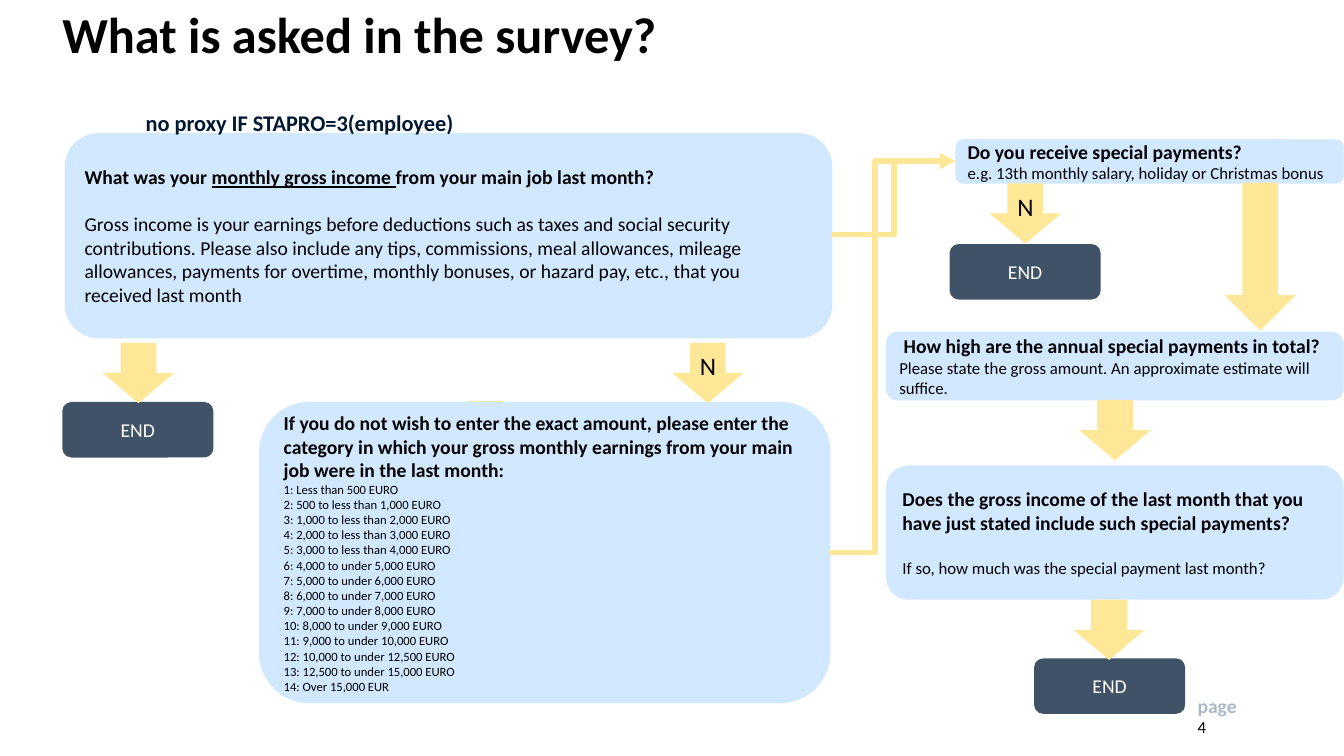
"""Build the survey question flow slide."""
from lxml import etree
from pptx import Presentation
from pptx import util as u
from pptx.dml import color
from pptx.enum import shapes, text
from pptx.oxml import ns

BOX, END, ARROW = "D1E8FF", "405265", "FFE798"
BLACK, WHITE, NAVY, GREY = "000000", "FFFFFF", "001932", "ABBAC9"
ROUND, DOWN = shapes.MSO_SHAPE.ROUNDED_RECTANGLE, shapes.MSO_SHAPE.DOWN_ARROW
LEFT, CENTER = text.PP_ALIGN.LEFT, text.PP_ALIGN.CENTER
TOP, MIDDLE = text.MSO_ANCHOR.TOP, text.MSO_ANCHOR.MIDDLE
NO_MARGINS = {f"margin_{side}": 0 for side in ("left", "top", "right", "bottom")}


def paint(fill, hex_color):
    fill.solid()
    fill.fore_color.rgb = color.RGBColor.from_string(hex_color)


def write(shape, paragraphs, hex_color, frame_format, paragraph_format):
    frame = shape.text_frame
    for name, value in frame_format.items():
        setattr(frame, name, value)
    for index, (space_before, runs) in enumerate(paragraphs):
        paragraph = frame.add_paragraph() if index else frame.paragraphs[0]
        for name, value in {"space_before": u.Pt(space_before), **paragraph_format}.items():
            setattr(paragraph, name, value)
        for words, size, bold, underline in runs:
            run = paragraph.add_run()
            run.text = words
            font_format = {"name": "Calibri", "size": u.Pt(size), "bold": bold, "underline": underline}
            for name, value in font_format.items():
                setattr(run.font, name, value)
            paint(run.font.fill, hex_color)


presentation = Presentation()
presentation.slide_width, presentation.slide_height = u.Cm(33.87), u.Cm(19.05)
slide = presentation.slides.add_slide(presentation.slide_layouts[5])

title = slide.shapes.title
title_place = {"left": 1.57, "top": -0.18, "width": 30.05, "height": 2.24}
for name, value in title_place.items():
    setattr(title, name, u.Cm(value))
write(title, [(0, [("What is asked in the survey?", 36, True, False)])], BLACK,
      {**NO_MARGINS, "vertical_anchor": MIDDLE, "word_wrap": True, "auto_size": text.MSO_AUTO_SIZE.NONE},
      {"alignment": LEFT, "line_spacing": 0.9})

categories = [
    "Less than 500 EURO", "500 to less than 1,000 EURO", "1,000 to less than 2,000 EURO",
    "2,000 to less than 3,000 EURO", "3,000 to less than 4,000 EURO", "4,000 to under 5,000 EURO",
    "5,000 to under 6,000 EURO", "6,000 to under 7,000 EURO", "7,000 to under 8,000 EURO",
    "8,000 to under 9,000 EURO", "9,000 to under 10,000 EURO", "10,000 to under 12,500 EURO",
    "12,500 to under 15,000 EURO", "Over 15,000 EUR",
]
monthly_income = [
    (0, [("What was your ", 14, True, False), ("monthly gross income ", 14, True, True),
         ("from your main job last month?", 14, True, False)]),
    (17, [("Gross income is your earnings before deductions such as taxes and social security "
           "contributions. Please also include any tips, commissions, meal allowances, mileage "
           "allowances, payments for overtime, monthly bonuses, or hazard pay, etc., that you "
           "received last month", 14, False, False)]),
]
income_category = [
    (0, [("If you do not wish to enter the exact amount, please enter the category in which your "
          "gross monthly earnings from your main job were in the last month:", 14, True, False)]),
    *((0, [(f"{number}: {label}", 9, False, False)]) for number, label in enumerate(categories, 1)),
]
special_payments = [
    (0, [("Do you receive special payments?", 14, True, False)]),
    (0, [("e.g. 13th monthly salary, holiday or Christmas bonus", 12, False, False)]),
]
annual_payments = [
    (0, [(" How high are the annual special payments in total? ", 14, True, False),
         ("Please state the gross amount. An approximate estimate will suffice.", 12, False, False)]),
]
included_payments = [
    (0, [("Does the gross income of the last month that you have just stated include such special "
          "payments?", 14, True, False)]),
    (17, [("If so, how much was the special payment last month?", 12, False, False)]),
]
end = [(0, [("END", 14, False, False)])]
no = [(0, [("N", 18, False, False)])]

flow = [
    (DOWN, 11.33, 10.11, 1.8, 2.39, ARROW, [], CENTER),
    (ROUND, 1.63, 3.35, 19.35, 5.18, BOX, monthly_income, LEFT),
    (ROUND, 6.53, 10.13, 14.4, 7.59, BOX, income_category, LEFT),
    (ROUND, 24.08, 3.51, 9.78, 1.12, BOX, special_payments, LEFT),
    (ROUND, 22.33, 8.36, 11.53, 1.73, BOX, annual_payments, LEFT),
    (ROUND, 22.33, 11.73, 11.53, 3.38, BOX, included_payments, LEFT),
    *((ROUND, left, top, 3.81, 1.4, END, end, CENTER)
      for left, top in [(1.57, 10.13), (23.93, 6.15), (26.06, 16.59)]),
    *((DOWN, left, top, 1.8, 1.52, ARROW, label, CENTER)
      for left, top, label in [(2.59, 8.64, []), (16.94, 8.64, no), (24.94, 4.62, no),
                               (27.2, 10.08, []), (27.05, 15.11, [])]),
    (DOWN, 30.86, 4.6, 1.8, 3.73, ARROW, [], CENTER),
]
for kind, left, top, width, height, fill, paragraphs, alignment in flow:
    shape = slide.shapes.add_shape(kind, u.Cm(left), u.Cm(top), u.Cm(width), u.Cm(height))
    shape.shadow.inherit = False
    paint(shape.fill, fill)
    shape.line.fill.background()
    write(shape, paragraphs, WHITE if fill == END else BLACK,
          {"vertical_anchor": MIDDLE, "word_wrap": True}, {"alignment": alignment})

for start_left, start_top, bend in [(20.98, 5.92, 50000), (20.93, 13.92, 35600)]:
    connector = slide.shapes.add_connector(
        shapes.MSO_CONNECTOR.ELBOW, u.Cm(start_left), u.Cm(start_top), u.Cm(24.08), u.Cm(4.06))
    paint(connector.line.fill, ARROW)
    connector.line.width = u.Pt(3.75)
    properties = connector.element.spPr
    guides = properties.find(ns.qn("a:prstGeom")).find(ns.qn("a:avLst"))
    etree.SubElement(guides, ns.qn("a:gd"), name="adj1", fmla=f"val {bend}")
    etree.SubElement(properties.find(ns.qn("a:ln")), ns.qn("a:tailEnd"), type="triangle")
    etree.SubElement(properties, ns.qn("a:effectLst"))

labels = [
    (3.05, 2.82, 9, 0.7, "no proxy IF STAPRO=3(employee)", 16, True, NAVY, CENTER, 0.9),
    (30.18, 17.48, 1.5, 0.51, "page", 14, True, GREY, LEFT, 1.0),
    (30.18, 18.06, 1.7, 0.71, "4", 12, False, BLACK, LEFT, 1.0),
]
for left, top, width, height, words, size, bold, hex_color, alignment, spacing in labels:
    label = slide.shapes.add_textbox(u.Cm(left), u.Cm(top), u.Cm(width), u.Cm(height))
    write(label, [(0, [(words, size, bold, False)])], hex_color,
          {**NO_MARGINS, "vertical_anchor": TOP, "word_wrap": True},
          {"alignment": alignment, "line_spacing": spacing})

presentation.save("out.pptx")
